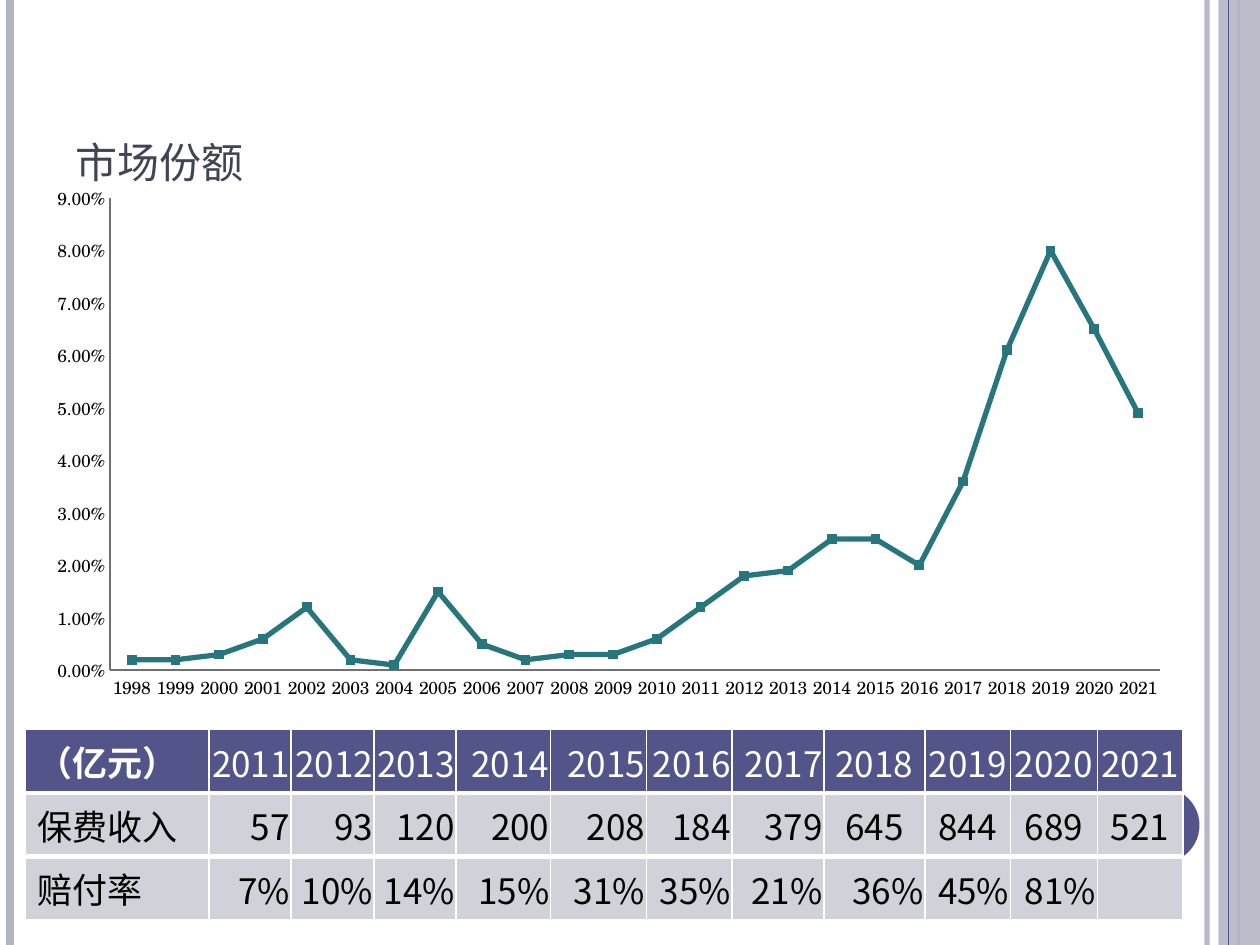
from pptx import Presentation
from pptx.chart.data import CategoryChartData
from pptx.dml.color import RGBColor
from pptx.enum.chart import XL_CHART_TYPE as CT, XL_MARKER_STYLE as MS, XL_TICK_MARK as TICK
from pptx.enum.shapes import MSO_CONNECTOR as CONN, MSO_SHAPE as SHAPE
from pptx.enum.text import MSO_ANCHOR as ANCHOR, PP_ALIGN as ALIGN
from pptx.oxml import parse_xml
from pptx.oxml.ns import nsdecls, qn
from pptx.util import Inches, Pt
from lxml.etree import SubElement

INDIGO = RGBColor(0x53, 0x54, 0x8A)
LILAC = RGBColor(0xB3, 0xB4, 0xC4)
SLATE = RGBColor(0x42, 0x44, 0x56)
TEAL = RGBColor(0x28, 0x76, 0x7D)
CELL = RGBColor(0xD1, 0xD1, 0xDA)
GREY = RGBColor(0x70, 0x70, 0x70)
WHITE = RGBColor(0xFF, 0xFF, 0xFF)
BLACK = RGBColor(0, 0, 0)
SERIF, SANS = "TeX Gyre Schola", "Noto Sans CJK SC"


def add_run(p, text, font, size, color, bold=False):
    r = p.add_run()
    r.text = text
    r.font.name, r.font.size, r.font.bold = font, Pt(size), bold
    r.font.color.rgb = color
    SubElement(r.font._element, qn("a:ea")).set("typeface", SANS)
    return r


def set_alpha(shape, percent):
    """Make the shape's first solid colour partly transparent."""
    clr = next(shape._element.spPr.iter(qn("a:srgbClr")))
    SubElement(clr, qn("a:alpha")).set("val", str(percent * 1000))


prs = Presentation()
prs.slide_width, prs.slide_height = W, H = Inches(10), Inches(7.5)
s = prs.slides.add_slide(prs.slide_layouts[5])

# Right band and disc
for kind, box, color in [(SHAPE.RECTANGLE, (9.67, 0, 0.33, 7.5), LILAC),
                         (SHAPE.OVAL, (8.92, 6.25, 0.6, 0.6), INDIGO)]:
    sp = s.shapes.add_shape(kind, *map(Inches, box))
    sp.fill.solid()
    sp.fill.fore_color.rgb = color
    sp.line.fill.background()
    sp.shadow.inherit = False
    if color == LILAC:
        set_alpha(sp, 87)

# Vertical rules over the full slide height
for x, color, width, alpha in [(9.58, LILAC, 3, 93), (0.08, LILAC, 4.5, 100),
                               (9.83, LILAC, 1.5, 100), (9.75, INDIGO, 0.75, 100)]:
    rule = s.shapes.add_connector(CONN.STRAIGHT, Inches(x), 0, Inches(x), H)
    rule.line.color.rgb = color
    rule.line.width = Pt(width)
    SubElement(rule._element.spPr, qn("a:effectLst"))
    if alpha < 100:
        set_alpha(rule, alpha)

# Title
title = s.shapes.title
title.left, title.top, title.width, title.height = map(Inches, (0.5, 0.3, 8.17, 1.25))
tf = title.text_frame
tf.vertical_anchor = ANCHOR.BOTTOM
p = tf.paragraphs[0]
p.alignment = ALIGN.LEFT
r = add_run(p, "市场份额", SERIF, 30, SLATE)
r.font._element.set("cap", "small")

# Premium table
rows = [
    ["（亿元）"] + [str(year) for year in range(2011, 2022)],
    "保费收入 57 93 120 200 208 184 379 645 844 689 521".split(),
    "赔付率 7% 10% 14% 15% 31% 35% 21% 36% 45% 81%".split() + [""],
]
col_widths = [1.46, 0.65, 0.66, 0.65, 0.75, 0.76, 0.68, 0.73, 0.8, 0.68, 0.69, 0.68]
table = s.shapes.add_table(len(rows), len(col_widths), Inches(0.2), Inches(5.79),
                           Inches(9.19), Inches(1.3)).table
for col, width in zip(table.columns, col_widths):
    col.width = Inches(width)
for i, row in enumerate(rows):
    table.rows[i].height = Inches(0.41)
    edges = {"L": 1, "R": 1, "T": 3 if i else 1, "B": 3 if i < 2 else 1}
    for j, text in enumerate(row):
        cell = table.cell(i, j)
        tcPr = cell._tc.get_or_add_tcPr()
        for side, width in edges.items():
            tcPr.append(parse_xml(
                f'<a:ln{side} {nsdecls("a")} w="{Pt(width)}"><a:solidFill>'
                f'<a:srgbClr val="{WHITE}"/></a:solidFill></a:ln{side}>'))
        cell.fill.solid()
        cell.fill.fore_color.rgb = CELL if i else INDIGO
        p = cell.text_frame.paragraphs[0]
        if j and text:
            cell.vertical_anchor = ANCHOR.MIDDLE
            cell.margin_left = cell.margin_right = cell.margin_top = Inches(0.01)
            cell.margin_bottom = 0
            p.alignment = ALIGN.CENTER if j > 7 and i < 2 else ALIGN.RIGHT
        if text:
            add_run(p, text, SANS if j else SERIF, 20, BLACK if i else WHITE, i == j == 0)

# Market share chart
data = CategoryChartData(number_format="0.00%")
data.categories = [str(year) for year in range(1998, 2022)]
data.add_series("市场份额", [
    0.002, 0.002, 0.003, 0.006, 0.012, 0.002, 0.001, 0.015,
    0.005, 0.002, 0.003, 0.003, 0.006, 0.012, 0.018, 0.019,
    0.025, 0.025, 0.02, 0.036, 0.061, 0.08, 0.065, 0.049])
chart = s.shapes.add_chart(CT.LINE_MARKERS, Inches(0.28), Inches(1.39),
                           Inches(9.11), Inches(4.25), data).chart
chart.has_legend = chart.has_title = False
chart.font.name, chart.font.size = SERIF, Pt(10)
chart.font.color.rgb = BLACK
for axis in (chart.category_axis, chart.value_axis):
    axis.major_tick_mark = axis.minor_tick_mark = TICK.NONE
    axis.has_major_gridlines = False
    axis.format.line.color.rgb = GREY
    axis.format.line.width = Pt(1)
chart.value_axis.minimum_scale, chart.value_axis.maximum_scale = 0, 0.09
chart.value_axis.major_unit = 0.01
chart.value_axis.tick_labels.number_format = "0.00%"
chart.value_axis.tick_labels.number_format_is_linked = False

plot = chart.plots[0]
plot.vary_by_categories = False
line = plot.series[0]
line.smooth = False
line.format.line.color.rgb = TEAL
line.format.line.width = Pt(3)
line.marker.style, line.marker.size = MS.SQUARE, 5
line.marker.format.fill.solid()
line.marker.format.fill.fore_color.rgb = TEAL
line.marker.format.line.color.rgb = TEAL

# Fix the inner plot area as shares of the chart
plot_area = chart._chartSpace.chart.plotArea
for old in plot_area.findall(qn("c:layout")):
    plot_area.remove(old)
layout = parse_xml(f'<c:layout {nsdecls("c")}><c:manualLayout/></c:layout>')
for tag, val in [("layoutTarget", "inner"), ("xMode", "edge"), ("yMode", "edge"),
                 ("x", 0.065), ("y", 0.043), ("w", 0.915), ("h", 0.882)]:
    SubElement(layout[0], qn(f"c:{tag}")).set("val", str(val))
plot_area.insert(0, layout)

prs.save("out.pptx")
